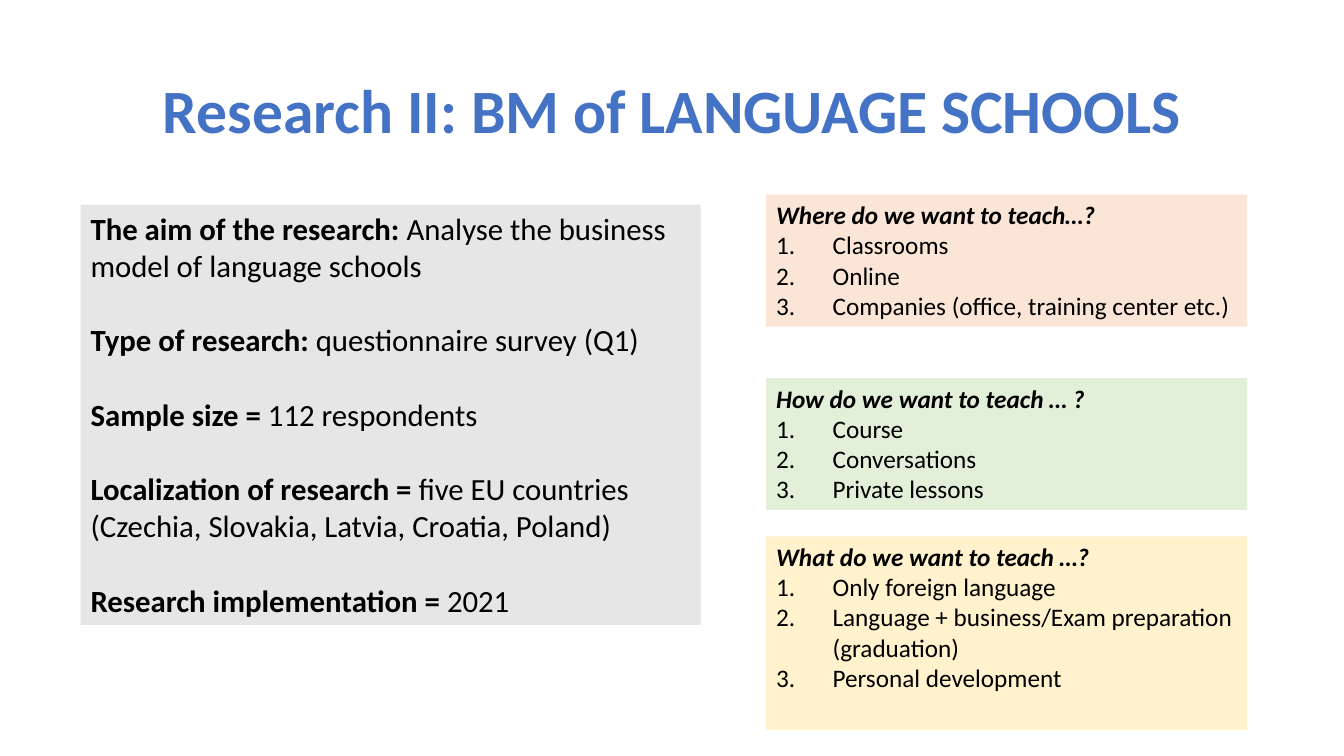
import pptx
import pptx.dml.color
import pptx.enum.shapes
import pptx.enum.text
import pptx.util
from lxml import etree
from pptx.oxml.ns import qn

Inches = pptx.util.Inches
Pt = pptx.util.Pt
RGBColor = pptx.dml.color.RGBColor
PP_ALIGN = pptx.enum.text.PP_ALIGN
MSO_ANCHOR = pptx.enum.text.MSO_ANCHOR

FONT = "Calibri"
BLUE = RGBColor(0x44, 0x72, 0xC4)
BLACK = RGBColor(0x00, 0x00, 0x00)
GREY = RGBColor(0xE7, 0xE6, 0xE6)
PEACH = RGBColor(0xFB, 0xE5, 0xD6)
GREEN = RGBColor(0xE2, 0xF0, 0xD9)
YELLOW = RGBColor(0xFF, 0xF2, 0xCC)

FACTS = [
    ("The aim of the research: ", "Analyse the business model of language schools"),
    ("Type of research: ", "questionnaire survey (Q1)"),
    ("Sample size = ", "112 respondents"),
    ("Localization of research = ",
     "five EU countries (Czechia, Slovakia, Latvia, Croatia, Poland)"),
    ("Research implementation = ", "2021"),
]
QUESTIONS = [
    (1.93, 1.31, PEACH, "Where do we want to teach…?",
     ["Classrooms", "Online", "Companies (office, training center etc.)"]),
    (3.75, 1.31, GREEN, "How do we want to teach … ?",
     ["Course", "Conversations", "Private lessons"]),
    (5.32, 1.92, YELLOW, "What do we want to teach …?",
     ["Only foreign language",
      "Language + business/Exam preparation (graduation)",
      "Personal development"]),
]


def add_run(p, text, size, color=BLACK, bold=False, italic=False):
    """Append a formatted run to a paragraph."""
    r = p.add_run()
    r.text = text
    r.font.name = FONT
    r.font.size = Pt(size)
    r.font.color.rgb = color
    r.font.bold = bold
    r.font.italic = italic


def add_panel(s, left, top, width, height, color):
    """Add a filled rectangle and return its text frame."""
    sp = s.shapes.add_shape(
        pptx.enum.shapes.MSO_SHAPE.RECTANGLE,
        Inches(left), Inches(top), Inches(width), Inches(height))
    sp.shadow.inherit = False
    sp.fill.solid()
    sp.fill.fore_color.rgb = color
    sp.line.fill.background()
    tf = sp.text_frame
    tf.word_wrap = True
    tf.vertical_anchor = MSO_ANCHOR.TOP
    return tf


def next_paragraph(tf, first):
    """Return a left-aligned paragraph, reusing the initial one if first."""
    p = tf.paragraphs[0] if first else tf.add_paragraph()
    p.alignment = PP_ALIGN.LEFT
    return p


def number_paragraph(p):
    """Give a paragraph automatic numbering with a hanging indent."""
    pPr = p._p.get_or_add_pPr()
    pPr.set("marL", str(Inches(0.56)))
    pPr.set("indent", str(-Inches(0.56)))
    etree.SubElement(pPr, qn("a:buFont"), typeface="+mj-lt")
    etree.SubElement(pPr, qn("a:buAutoNum"), type="arabicPeriod")


def add_title(s, left, top, width, height, text):
    """Add the centred slide title."""
    sp = s.shapes.add_textbox(
        Inches(left), Inches(top), Inches(width), Inches(height))
    tf = sp.text_frame
    tf.word_wrap = True
    tf.vertical_anchor = MSO_ANCHOR.MIDDLE
    p = tf.paragraphs[0]
    p.alignment = PP_ALIGN.CENTER
    p.line_spacing = 0.9
    add_run(p, text, 44, BLUE, bold=True)


def add_facts(s, left, top, width, height, facts):
    """Add the panel of labelled research facts."""
    tf = add_panel(s, left, top, width, height, GREY)
    for i, (label, value) in enumerate(facts):
        p = next_paragraph(tf, i == 0)
        if i:
            p.space_before = Pt(26.85)
        add_run(p, label, 22, bold=True)
        add_run(p, value, 22)


def add_question(s, left, top, width, height, color, question, answers):
    """Add a question panel with numbered answers."""
    tf = add_panel(s, left, top, width, height, color)
    add_run(next_paragraph(tf, True), question, 18, bold=True, italic=True)
    for answer in answers:
        p = next_paragraph(tf, False)
        number_paragraph(p)
        add_run(p, answer, 18)


def main():
    """Build and save the slide."""
    prs = pptx.Presentation()
    prs.slide_width = Inches(13.33)
    prs.slide_height = Inches(7.5)
    s = prs.slides.add_slide(prs.slide_layouts[6])
    add_title(s, 0.92, 0.4, 11.5, 1.45, "Research II: BM of LANGUAGE SCHOOLS")
    add_facts(s, 0.8, 2.03, 6.15, 4.17, FACTS)
    for top, height, color, question, answers in QUESTIONS:
        add_question(s, 7.6, top, 4.77, height, color, question, answers)
    prs.save("out.pptx")


if __name__ == "__main__":
    main()
